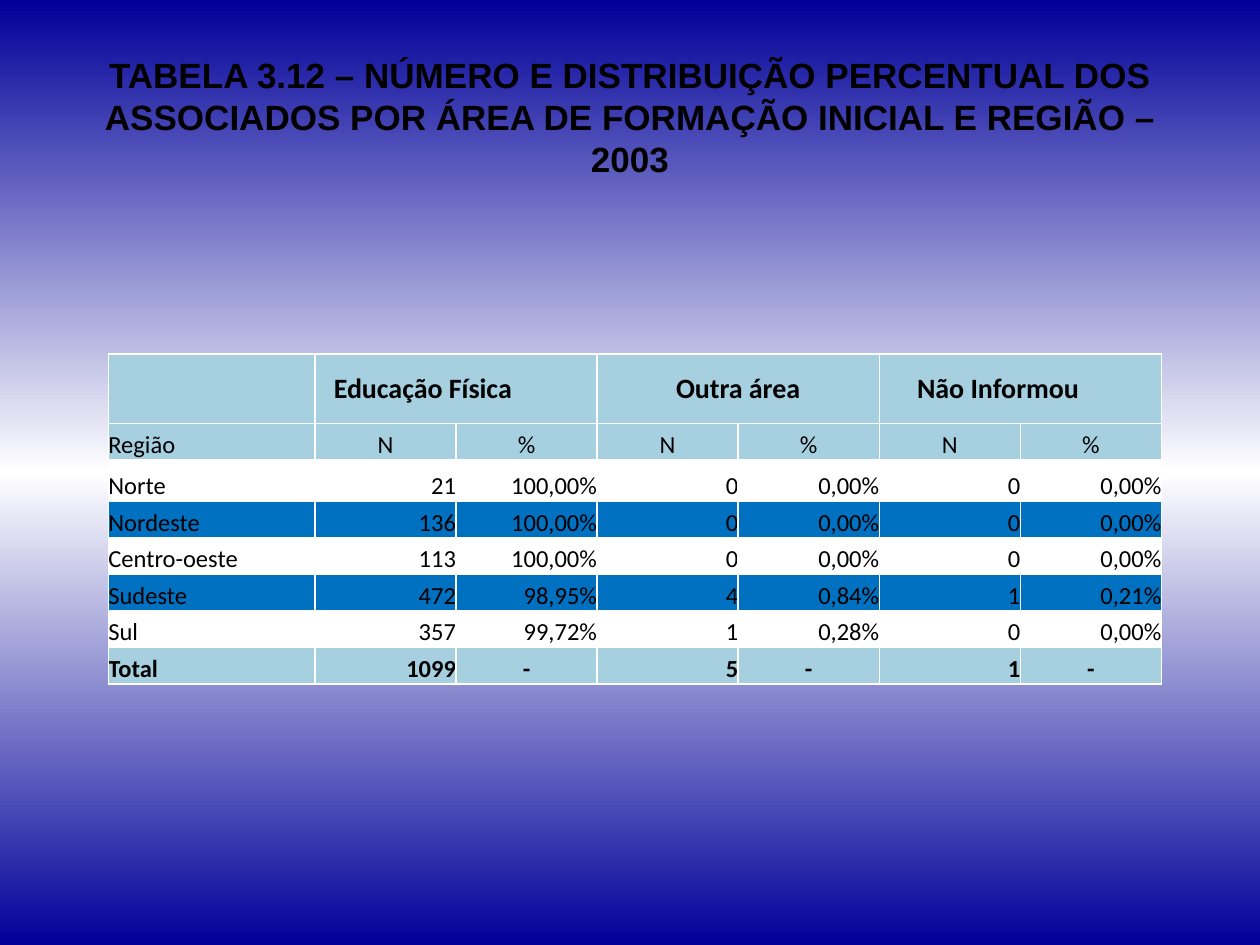
"""Build the slide on members by field of training and region."""
from copy import deepcopy

from lxml import etree
from pptx import Presentation
from pptx.dml.color import RGBColor
from pptx.enum import text as t
from pptx.oxml import ns
from pptx.util import Inches, Pt

HUES = {"navy": "000099", "white": "FFFFFF", "black": "000000",
        "pale": "A6D0DF", "blue": "0070C0"}
FILLS = ["pale", "pale", "white", "blue", "white", "blue", "white", "pale"]
ROWS = [
    ["", "Educação Física", "", "Outra área", "", "Não Informou", ""],
    ["Região", "N", "%", "N", "%", "N", "%"],
    ["Norte", "21", "100,00%", "0", "0,00%", "0", "0,00%"],
    ["Nordeste", "136", "100,00%", "0", "0,00%", "0", "0,00%"],
    ["Centro-oeste", "113", "100,00%", "0", "0,00%", "0", "0,00%"],
    ["Sudeste", "472", "98,95%", "4", "0,84%", "1", "0,21%"],
    ["Sul", "357", "99,72%", "1", "0,28%", "0", "0,00%"],
    ["Total", "1099", "-", "5", "-", "1", "-"],
]
INDENTS = {1: 0.15, 5: 0.3}
LAST = len(ROWS) - 1


def style(para, face, size, bold, align):
    font = para.font
    font.name, font.size, font.bold = face, Pt(size), bold
    font.color.rgb = RGBColor.from_string(HUES["black"])
    para.alignment = align


def edge(cell):
    props = cell._tc.get_or_add_tcPr()
    for side in ("lnL", "lnR", "lnT", "lnB"):
        line = etree.SubElement(props, ns.qn("a:" + side), w=str(Pt(1)))
        fill = etree.SubElement(line, ns.qn("a:solidFill"))
        etree.SubElement(fill, ns.qn("a:srgbClr"), val=HUES["white"])


deck = Presentation()
deck.slide_width, deck.slide_height = Inches(10), Inches(7.5)
slide = deck.slides.add_slide(deck.slide_layouts[6])

back = slide.background.fill
back.gradient()
back.gradient_angle = 270
first = slide.element.find(".//" + ns.qn("a:gs"))
first.addnext(deepcopy(first))
for stop, hue, pos in zip(back.gradient_stops, ("navy", "white", "navy"), (0, 0.5, 1)):
    stop.color.rgb = RGBColor.from_string(HUES[hue])
    stop.position = pos

title = slide.shapes.add_textbox(Inches(0.5), Inches(0.3), Inches(9), Inches(1.25))
frame = title.text_frame
frame.word_wrap = True
frame.vertical_anchor = t.MSO_ANCHOR.MIDDLE
frame.text = ("TABELA 3.12 – NÚMERO E DISTRIBUIÇÃO PERCENTUAL DOS ASSOCIADOS "
              "POR ÁREA DE FORMAÇÃO INICIAL E REGIÃO – 2003")
style(frame.paragraphs[0], "Arial", 20, True, t.PP_ALIGN.CENTER)

table = slide.shapes.add_table(len(ROWS), len(ROWS[0]), Inches(0.86), Inches(2.81),
                               Inches(8.36), Inches(2.62)).table
for c, col in enumerate(table.columns):
    col.width = Inches(1.12 if c else 1.64)
for r, row in enumerate(table.rows):
    row.height = Inches({0: 0.55, 2: 0.33}.get(r, 0.29))

for r, words in enumerate(ROWS):
    for c, word in enumerate(words):
        cell = table.cell(r, c)
        edge(cell)
        cell.fill.solid()
        cell.fill.fore_color.rgb = RGBColor.from_string(HUES[FILLS[r]])
        cell.margin_left = cell.margin_right = 0
        cell.margin_top = cell.margin_bottom = 0
        cell.vertical_anchor = t.MSO_ANCHOR.BOTTOM if r else t.MSO_ANCHOR.MIDDLE
        if r == 0 and c in INDENTS:
            cell.margin_left = Inches(INDENTS[c])
        if c == 0 or (r == 0 and c in INDENTS):
            align = t.PP_ALIGN.LEFT
        elif r < 2 or word == "-":
            align = t.PP_ALIGN.CENTER
        else:
            align = t.PP_ALIGN.RIGHT
        cell.text = word
        style(cell.text_frame.paragraphs[0], "Calibri", 14 if r else 16,
              r in (0, LAST), align)

for c in (1, 3, 5):
    table.cell(0, c).merge(table.cell(0, c + 1))

deck.save("out.pptx")
